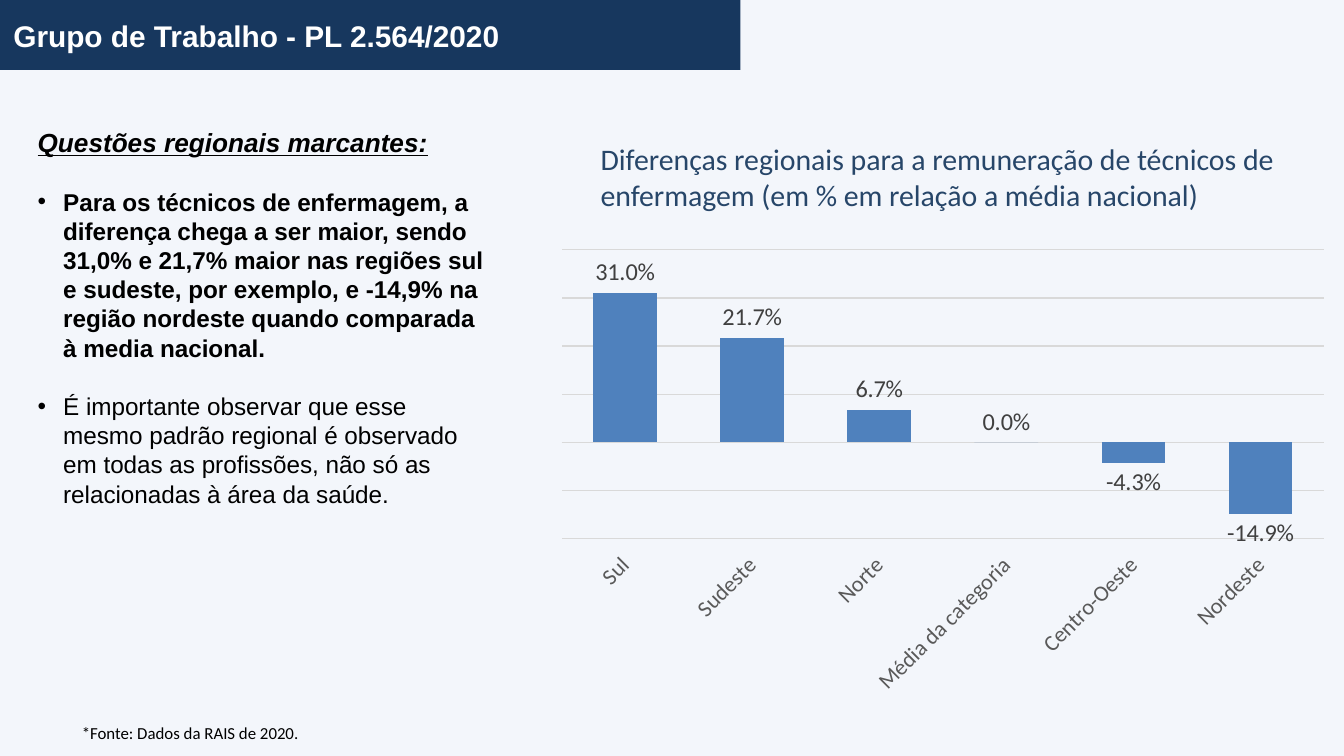
"""Build the slide on regional pay gaps among nursing technicians."""
from pptx import Presentation
from pptx.chart.data import CategoryChartData
from pptx.dml.color import RGBColor
from pptx.enum.chart import XL_CHART_TYPE, XL_LABEL_POSITION, XL_TICK_LABEL_POSITION, XL_TICK_MARK
from pptx.enum.shapes import MSO_SHAPE
from pptx.enum.text import MSO_ANCHOR, MSO_AUTO_SIZE, PP_ALIGN
from pptx.oxml.xmlchemy import OxmlElement
from pptx.util import Inches, Pt

NAVY = RGBColor(0x17, 0x37, 0x5E)
PALE = RGBColor(0xF3, 0xF6, 0xFB)
WHITE = RGBColor(0xFF, 0xFF, 0xFF)
BLACK = RGBColor(0, 0, 0)
STEEL = RGBColor(0x27, 0x46, 0x69)
BLUE = RGBColor(0x4F, 0x81, 0xBD)
GRID = RGBColor(0xD9, 0xD9, 0xD9)
GRAY = RGBColor(0x59, 0x59, 0x59)
DARK = RGBColor(0x40, 0x40, 0x40)


def style(font, color, **values):
    font.color.rgb = color
    for name, value in values.items():
        setattr(font, name, value)


def place(shape, left, top, width, height, anchor=MSO_ANCHOR.TOP):
    spots = {"left": left, "top": top, "width": width, "height": height}
    for name, value in spots.items():
        setattr(shape, name, Inches(value))
    frame = shape.text_frame
    settings = {"word_wrap": True, "auto_size": MSO_AUTO_SIZE.NONE, "vertical_anchor": anchor}
    for name, value in settings.items():
        setattr(frame, name, value)
    return frame


deck = Presentation()
deck.slide_width, deck.slide_height = Inches(10), Inches(10 * 9 / 16)
slide = deck.slides.add_slide(deck.slide_layouts[1])
slide.background.fill.solid()
slide.background.fill.fore_color.rgb = PALE
shapes = slide.shapes
title, body = slide.placeholders

band = shapes.add_shape(MSO_SHAPE.RECTANGLE, 0, 0, Inches(5.51), Inches(0.52))
band.shadow.inherit = False
band.fill.solid()
band.fill.fore_color.rgb = NAVY
band.line.fill.background()
shapes._spTree.insert(2, band._element)

frame = place(title, 0, 0.08, 3.93, 0.37, MSO_ANCHOR.MIDDLE)
frame.word_wrap = False
frame.text = "Grupo de Trabalho - PL 2.564/2020"
frame.paragraphs[0].alignment = PP_ALIGN.LEFT
style(frame.paragraphs[0].runs[0].font, WHITE, name="Arial", size=Pt(16), bold=True)

points = [
    ("Questões regionais marcantes:", dict(size=Pt(14), bold=True, italic=True, underline=True)),
    ("Para os técnicos de enfermagem, a diferença chega a ser maior, sendo 31,0% e 21,7% maior "
     "nas regiões sul e sudeste, por exemplo, e -14,9% na região nordeste quando comparada "
     "à media nacional.", dict(size=Pt(13), bold=True)),
    ("É importante observar que esse mesmo padrão regional é observado em todas as profissões, "
     "não só as relacionadas à área da saúde.", dict(size=Pt(13), bold=False)),
]
frame = place(body, 0.18, 0.89, 3.57, 3.38)
frame.text = "\n".join(text for text, _ in points)
for rank, (para, (_, look)) in enumerate(zip(frame.paragraphs, points)):
    para.line_spacing = 1.0
    para.space_before = Pt(15.7 if rank else 0)
    inset = Inches(0.19 if rank else 0)
    props = para._p.get_or_add_pPr()
    props.set("marL", str(inset))
    props.set("indent", str(-inset))
    if not rank:
        props.append(OxmlElement("a:buNone"))
    style(para.runs[0].font, BLACK, name="Arial", **look)

notes = [
    ("*Fonte: Dados da RAIS de 2020.", (0.51, 5.33, 8.19, 0.25), 9, BLACK),
    ("Diferenças regionais para a remuneração de técnicos de enfermagem "
     "(em % em relação a média nacional)", (4.37, 1, 5.75, 0.64), 16, STEEL),
]
for text, box, size, color in notes:
    frame = place(shapes.add_textbox(0, 0, 0, 0), *box)
    frame.text = text
    style(frame.paragraphs[0].runs[0].font, color, name="Calibri", size=Pt(size))

data = CategoryChartData(number_format="0.0%")
data.categories = ["Sul", "Sudeste", "Norte", "Média da categoria", "Centro-Oeste", "Nordeste"]
data.add_series("Series 1", [0.31, 0.217, 0.067, 0, -0.043, -0.149])
chart = shapes.add_chart(XL_CHART_TYPE.COLUMN_CLUSTERED, Inches(4.06), Inches(1.79),
                         Inches(5.91), Inches(3.45), data).chart
chart.has_title = chart.has_legend = False
style(chart.font, BLACK, name="Calibri", size=Pt(10))

plot = chart.plots[0]
plot.gap_width, plot.overlap, plot.vary_by_categories = 100, -27, False
bars = plot.series[0]
bars.invert_if_negative = False
bars.format.fill.solid()
bars.format.fill.fore_color.rgb = BLUE
labels = bars.data_labels
formats = {"show_value": True, "number_format": "0.0%", "number_format_is_linked": False,
           "position": XL_LABEL_POSITION.OUTSIDE_END}
for name, value in formats.items():
    setattr(labels, name, value)
style(labels.font, DARK, name="Calibri", size=Pt(13))

cats, vals = chart.category_axis, chart.value_axis
cats.tick_label_position = XL_TICK_LABEL_POSITION.LOW
cats.major_tick_mark = XL_TICK_MARK.NONE
style(cats.tick_labels.font, GRAY, name="Calibri", size=Pt(12))
cats._element.txPr.bodyPr.set("rot", "-2700000")
scale = {"visible": False, "minimum_scale": -0.2, "maximum_scale": 0.4, "major_unit": 0.1,
         "has_major_gridlines": True}
for name, value in scale.items():
    setattr(vals, name, value)
for line in (cats.format.line, vals.major_gridlines.format.line):
    line.color.rgb = GRID
    line.width = Pt(0.75)

deck.save("out.pptx")
